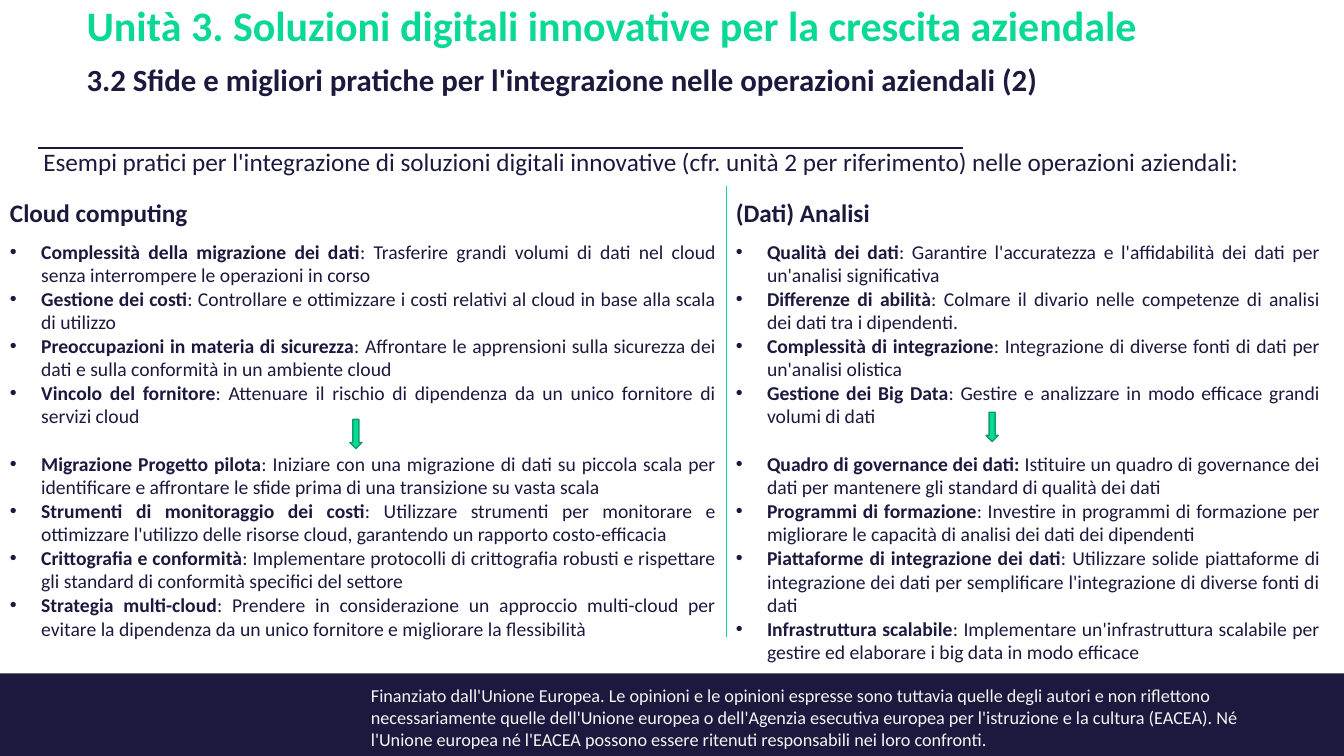
from lxml.etree import SubElement
from pptx import Presentation
from pptx.dml.color import RGBColor
from pptx.enum.shapes import MSO_CONNECTOR, MSO_SHAPE
from pptx.enum.text import MSO_ANCHOR, PP_ALIGN
from pptx.oxml.ns import qn
from pptx.util import Inches, Pt

FONT = "Calibri"
COLORS = {"navy": "1B193E", "green": "0AD995", "dark_green": "07A16E", "light": "F5F5F5"}
WIDTH, HEIGHT = Inches(13.33), Inches(7.5)
DIVIDER = 54.01  # column where the two topics meet
TOPIC_TOP = 25.47
INDENT = Inches(0.31)

TITLE = "Unità 3. Soluzioni digitali innovative per la crescita aziendale"
SUBTITLE = "3.2 Sfide e migliori pratiche per l'integrazione nelle operazioni aziendali (2)"
INTRO = ("Esempi pratici per l'integrazione di soluzioni digitali innovative "
         "(cfr. unità 2 per riferimento) nelle operazioni aziendali:")
FUNDING = ("Finanziato dall'Unione Europea. Le opinioni e le opinioni espresse sono tuttavia "
           "quelle degli autori e non riflettono necessariamente quelle dell'Unione europea o "
           "dell'Agenzia esecutiva europea per l'istruzione e la cultura (EACEA). Né l'Unione "
           "europea né l'EACEA possono essere ritenuti responsabili nei loro confronti.")

CLOUD_CHALLENGES = [
    ("Complessità della migrazione dei dati",
     ": Trasferire grandi volumi di dati nel cloud senza interrompere le operazioni in corso"),
    ("Gestione dei costi",
     ": Controllare e ottimizzare i costi relativi al cloud in base alla scala di utilizzo"),
    ("Preoccupazioni in materia di sicurezza",
     ": Affrontare le apprensioni sulla sicurezza dei dati e sulla conformità in un ambiente cloud"),
    ("Vincolo del fornitore",
     ": Attenuare il rischio di dipendenza da un unico fornitore di servizi cloud"),
]
CLOUD_PRACTICES = [
    ("Migrazione Progetto pilota",
     ": Iniziare con una migrazione di dati su piccola scala per identificare e affrontare "
     "le sfide prima di una transizione su vasta scala"),
    ("Strumenti di monitoraggio dei costi",
     ": Utilizzare strumenti per monitorare e ottimizzare l'utilizzo delle risorse cloud, "
     "garantendo un rapporto costo-efficacia"),
    ("Crittografia e conformità",
     ": Implementare protocolli di crittografia robusti e rispettare gli standard di "
     "conformità specifici del settore"),
    ("Strategia multi-cloud",
     ": Prendere in considerazione un approccio multi-cloud per evitare la dipendenza da "
     "un unico fornitore e migliorare la flessibilità"),
]
DATA_CHALLENGES = [
    ("Qualità dei dati",
     ": Garantire l'accuratezza e l'affidabilità dei dati per un'analisi significativa"),
    ("Differenze di abilità",
     ": Colmare il divario nelle competenze di analisi dei dati tra i dipendenti."),
    ("Complessità di integrazione",
     ": Integrazione di diverse fonti di dati per un'analisi olistica"),
    ("Gestione dei Big Data",
     ": Gestire e analizzare in modo efficace grandi volumi di dati"),
]
DATA_PRACTICES = [
    ("Quadro di governance dei dati: ",
     "Istituire un quadro di governance dei dati per mantenere gli standard di qualità dei dati"),
    ("Programmi di formazione",
     ": Investire in programmi di formazione per migliorare le capacità di analisi dei dati "
     "dei dipendenti"),
    ("Piattaforme di integrazione dei dati",
     ": Utilizzare solide piattaforme di integrazione dei dati per semplificare "
     "l'integrazione di diverse fonti di dati"),
    ("Infrastruttura scalabile",
     ": Implementare un'infrastruttura scalabile per gestire ed elaborare i big data in "
     "modo efficace"),
]


def grid(x, y, *size):
    """Turn hundredths of the slide's width and height into lengths."""
    return [int(v * unit / 100) for v, unit in zip((x, y, *size), (WIDTH, HEIGHT) * 2)]


def color(name):
    return RGBColor.from_string(COLORS[name])


def style(font, size, name="navy", bold=False):
    font.name, font.size, font.bold = FONT, Pt(size), bold
    font.color.rgb = color(name)


def add_text(s, area, text, size, name="navy", bold=False, align=PP_ALIGN.LEFT):
    tf = s.shapes.add_textbox(*grid(*area)).text_frame
    tf.word_wrap = True
    p = tf.paragraphs[0]
    p.text = text
    p.alignment = align
    style(p.runs[0].font, size, name, bold)
    return tf


def add_shape(s, kind, area, fill, line=None):
    sp = s.shapes.add_shape(kind, *grid(*area))
    sp.shadow.inherit = False
    sp.fill.solid()
    sp.fill.fore_color.rgb = color(fill)
    if line:
        sp.line.color.rgb = color(line)
        sp.line.width = Pt(1)
    else:
        sp.line.fill.background()


def add_line(s, start, end, name, width):
    cx = s.shapes.add_connector(MSO_CONNECTOR.STRAIGHT, *grid(*start, *end))
    cx.line.color.rgb = color(name)
    cx.line.width = Pt(width)
    SubElement(cx._element.spPr, qn("a:effectLst"))


def add_bullets(tf, items, gap):
    """Append bullets with bold lead-ins; gap is the space above the first."""
    for i, parts in enumerate(items):
        p = tf.add_paragraph()
        p.alignment = PP_ALIGN.JUSTIFY
        p.space_before = Pt(0 if i else gap)
        pPr = p._p.get_or_add_pPr()
        pPr.set("marL", str(INDENT))
        pPr.set("indent", str(-INDENT))
        SubElement(pPr, qn("a:buFont"), typeface="Arial")
        SubElement(pPr, qn("a:buChar"), char="•")
        for text, bold in zip(parts, (True, False)):
            r = p.add_run()
            r.text = text
            style(r.font, 14, bold=bold)


def add_topic(s, area, heading, challenges, practices):
    tf = add_text(s, area, heading, 18, bold=True, align=PP_ALIGN.JUSTIFY)
    add_bullets(tf, challenges, 8.5)
    add_bullets(tf, practices, 17)


def add_title(s):
    tf = add_text(s, (5.7, -5.07, 81.4, 18.67), TITLE, 30, "green", True)
    tf.vertical_anchor = MSO_ANCHOR.BOTTOM
    p = tf.add_paragraph()
    p.text = SUBTITLE
    p.space_before = Pt(10)
    style(p.runs[0].font, 22, bold=True)
    for p in tf.paragraphs:
        p.line_spacing = 0.9


def main():
    prs = Presentation()
    prs.slide_width, prs.slide_height = WIDTH, HEIGHT
    s = prs.slides.add_slide(prs.slide_layouts[6])

    add_shape(s, MSO_SHAPE.RECTANGLE, (0, 89.07, 100, 10.93), "navy")
    add_text(s, (26.86, 89.87, 66.32, 10.13), FUNDING, 13, "light")
    add_line(s, (2.85, 19.6), (71.64, 19.6), "navy", 1)
    add_title(s)
    add_text(s, (2.48, 18.67, 92.27, 5.33), INTRO, 18, align=PP_ALIGN.JUSTIFY)

    add_topic(s, (0, TOPIC_TOP, DIVIDER, 60.4), "Cloud computing",
              CLOUD_CHALLENGES, CLOUD_PRACTICES)
    add_topic(s, (DIVIDER, TOPIC_TOP, 44.94, 63.47), "(Dati) Analisi",
              DATA_CHALLENGES, DATA_PRACTICES)
    add_line(s, (DIVIDER, 24.67), (DIVIDER, 84.27), "green", 0.5)
    for x, y in ((73.37, 54.53), (26.03, 55.47)):
        add_shape(s, MSO_SHAPE.DOWN_ARROW, (x, y, 0.9, 3.87), "green", "dark_green")

    prs.save("out.pptx")


if __name__ == "__main__":
    main()
